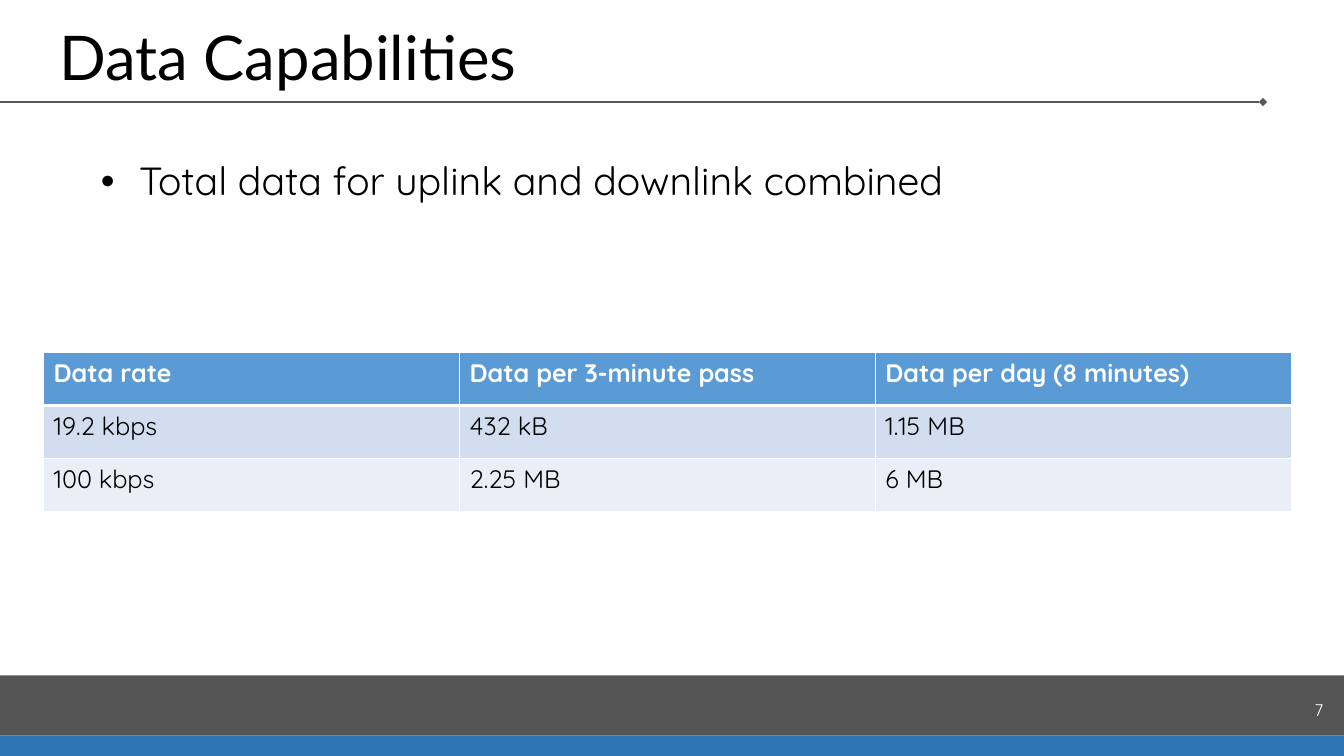
from dataclasses import dataclass

from pptx import Presentation
from pptx.dml.color import RGBColor
from pptx.enum.shapes import MSO_CONNECTOR, MSO_SHAPE
from pptx.enum.text import MSO_ANCHOR, PP_ALIGN
from pptx.oxml.ns import qn
from pptx.util import Cm, Pt
from lxml.etree import SubElement


@dataclass(frozen=True)
class Theme:
    heading_font: str = "Lato"
    body_font: str = "Quicksand"
    title_size: int = 44
    bullet_size: int = 28
    table_size: int = 18
    number_size: int = 12
    black: str = "000000"
    white: str = "FFFFFF"
    rule: str = "595959"
    footer_blue: str = "2E75B6"
    row_fills: tuple = ("5B9BD5", "D2DEEF", "EAEFF7")


theme = Theme()


def style_text(paragraph, text, font_name, size, color, bold=False):
    paragraph.text = text
    formats = {"name": font_name, "size": Pt(size), "bold": bold}
    for attribute, value in formats.items():
        setattr(paragraph.runs[0].font, attribute, value)
    paragraph.runs[0].font.color.rgb = RGBColor.from_string(color)


def add_text_frame(left, top, width, height, anchor):
    frame = slide.shapes.add_textbox(Cm(left), Cm(top), Cm(width), Cm(height)).text_frame
    frame.word_wrap = True
    frame.vertical_anchor = anchor
    return frame


presentation = Presentation()
presentation.slide_width = Cm(33.87)
presentation.slide_height = Cm(19.05)
slide = presentation.slides.add_slide(presentation.slide_layouts[6])

# Footer bands: top, height, colour, opacity in percent
for top, height, color, opacity in (
    (17.02, 1.52, theme.black, 67),
    (18.54, 0.51, theme.footer_blue, 100),
):
    band = slide.shapes.add_shape(
        MSO_SHAPE.RECTANGLE, 0, Cm(top), presentation.slide_width, Cm(height)
    )
    band.shadow.inherit = False
    band.line.fill.background()
    band.fill.solid()
    band.fill.fore_color.rgb = RGBColor.from_string(color)
    if opacity < 100:
        fill_color = band.fill._xPr.find(qn("a:solidFill"))[0]
        SubElement(fill_color, qn("a:alpha"), val=str(opacity * 1000))

# Rule under the title
title_rule = slide.shapes.add_connector(
    MSO_CONNECTOR.STRAIGHT, 0, Cm(2.57), Cm(31.83), Cm(2.57)
)
title_rule.line.color.rgb = RGBColor.from_string(theme.rule)
title_rule.line.width = Pt(1)
SubElement(title_rule.line._get_or_add_ln(), qn("a:tailEnd"), type="diamond")
SubElement(title_rule._element.spPr, qn("a:effectLst"))

# Title and page number
title = add_text_frame(1.24, 0.48, 29.21, 2.01, MSO_ANCHOR.BOTTOM).paragraphs[0]
title.line_spacing = 0.9
style_text(title, "Data Capabilities", theme.heading_font, theme.title_size, theme.black)

page_number = add_text_frame(25.98, 17.37, 7.62, 1.02, MSO_ANCHOR.MIDDLE).paragraphs[0]
page_number.alignment = PP_ALIGN.RIGHT
style_text(page_number, "7", theme.body_font, theme.number_size, theme.white)

# Data volumes
rows = (
    ("Data rate", "Data per 3-minute pass", "Data per day (8 minutes)"),
    ("19.2 kbps", "432 kB", "1.15 MB"),
    ("100 kbps", "2.25 MB", "6 MB"),
)
data_volumes = slide.shapes.add_table(
    len(rows), len(rows[0]), Cm(1.1), Cm(8.88), Cm(31.44), Cm(4.02)
).table
for row_index, (labels, row_fill) in enumerate(zip(rows, theme.row_fills)):
    is_header = row_index == 0
    for column_index, label in enumerate(labels):
        cell = data_volumes.cell(row_index, column_index)
        style_text(
            cell.text_frame.paragraphs[0], label, theme.body_font, theme.table_size,
            theme.white if is_header else theme.black, is_header,
        )
        cell_properties = cell._tc.get_or_add_tcPr()
        border_widths = {
            "a:lnL": 1,
            "a:lnR": 1,
            "a:lnT": 3 if row_index == 1 else 1,
            "a:lnB": 3 if is_header else 1,
        }
        for side, width in border_widths.items():
            border = SubElement(cell_properties, qn(side), w=str(Pt(width)))
            border_fill = SubElement(border, qn("a:solidFill"))
            SubElement(border_fill, qn("a:srgbClr"), val=theme.white)
        cell.fill.solid()
        cell.fill.fore_color.rgb = RGBColor.from_string(row_fill)

# Bullet
summary = add_text_frame(1.02, 3.96, 31.47, 5.89, MSO_ANCHOR.TOP).paragraphs[0]
summary.line_spacing = 0.9
summary_properties = summary._p.get_or_add_pPr()
summary_properties.set("marL", str(Cm(2.24)))
summary_properties.set("indent", str(Cm(-0.97)))
SubElement(summary_properties, qn("a:buFont"), typeface="Arial")
SubElement(summary_properties, qn("a:buChar"), char="•")
style_text(
    summary, "Total data for uplink and downlink combined",
    theme.body_font, theme.bullet_size, theme.black,
)

presentation.save("out.pptx")
